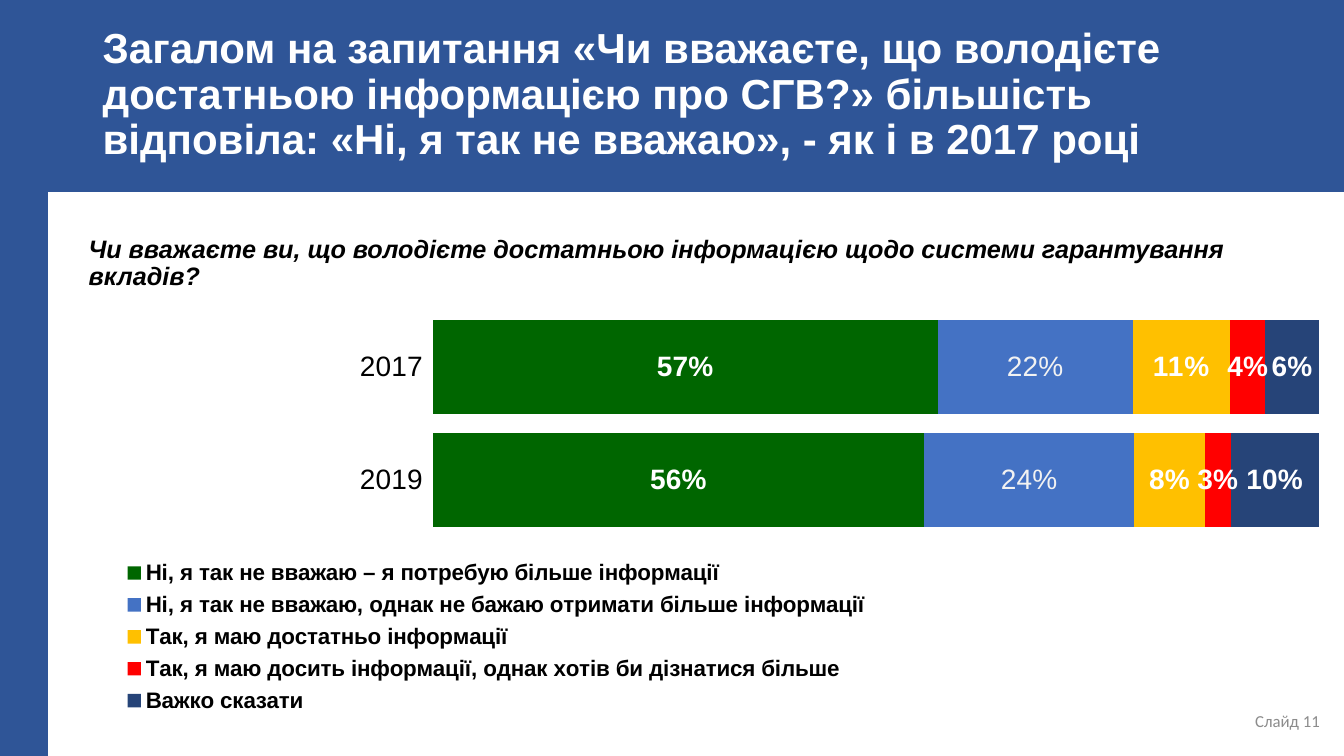
from lxml import etree
from pptx import Presentation
from pptx.chart.data import CategoryChartData
from pptx.dml.color import RGBColor
from pptx.enum.chart import XL_CHART_TYPE, XL_LABEL_POSITION, XL_LEGEND_POSITION, XL_TICK_MARK
from pptx.enum.shapes import MSO_SHAPE
from pptx.enum.text import MSO_ANCHOR, PP_ALIGN
from pptx.oxml.ns import qn
from pptx.util import Inches, Pt

BLACK = RGBColor(0x00, 0x00, 0x00)
WHITE = RGBColor(0xFF, 0xFF, 0xFF)
PALE = RGBColor(0xF2, 0xF2, 0xF2)
GREY = RGBColor(0x8C, 0x8C, 0x8C)
BANNER = RGBColor(0x2F, 0x55, 0x97)
GREEN = RGBColor(0x00, 0x66, 0x00)
BLUE = RGBColor(0x44, 0x72, 0xC4)
AMBER = RGBColor(0xFF, 0xC0, 0x00)
RED = RGBColor(0xFF, 0x00, 0x00)
NAVY = RGBColor(0x26, 0x44, 0x78)

YEARS = ["2017", "2019"]
# Answer, shares by year, bar colour, label colour, bold label
ANSWERS = [
    ("Ні, я так не вважаю – я потребую більше інформації", (0.57, 0.56), GREEN, WHITE, True),
    ("Ні, я так не вважаю, однак не бажаю отримати більше інформації", (0.22, 0.24), BLUE, PALE, False),
    ("Так, я маю достатньо інформації", (0.11, 0.08), AMBER, WHITE, True),
    ("Так, я маю досить інформації, однак хотів би дізнатися більше", (0.04, 0.03), RED, WHITE, True),
    ("Важко сказати", (0.06, 0.10), NAVY, WHITE, True),
]


class SlideBuilder:
    """Holds the style and the current slide."""

    def __init__(self, presentation, font_name):
        self.slide = presentation.slides.add_slide(presentation.slide_layouts[6])
        self.font_name = font_name

    def style_font(self, font, color, **values):
        for name, value in {"name": self.font_name, **values}.items():
            setattr(font, name, value)
        font.color.rgb = color

    def band(self, *box):
        shape = self.slide.shapes.add_shape(MSO_SHAPE.RECTANGLE, *map(Inches, box))
        shape.shadow.inherit = False
        shape.fill.solid()
        shape.fill.fore_color.rgb = BANNER
        shape.line.color.rgb = BANNER
        shape.line.width = Pt(1)

    def text(self, box, words, color, paragraph_format=None, anchor=MSO_ANCHOR.TOP, **font_values):
        frame = self.slide.shapes.add_textbox(*map(Inches, box)).text_frame
        frame.word_wrap = True
        frame.vertical_anchor = anchor
        paragraph = frame.paragraphs[0]
        for name, value in (paragraph_format or {}).items():
            setattr(paragraph, name, value)
        run = paragraph.add_run()
        run.text = words
        self.style_font(run.font, color, **font_values)

    def manual_layout(self, inner, x, y, w, h):
        layout = etree.Element(qn("c:layout"))
        manual = etree.SubElement(layout, qn("c:manualLayout"))
        settings = {"layoutTarget": "inner"} if inner else {}
        settings.update(xMode="edge", yMode="edge", x=x, y=y, w=w, h=h)
        for name, value in settings.items():
            etree.SubElement(manual, qn(f"c:{name}")).set("val", str(value))
        return layout

    def stacked_bars(self, box, categories, answers):
        data = CategoryChartData(number_format="0%")
        data.categories = categories
        for name, shares, *_ in answers:
            data.add_series(name, shares)
        chart = self.slide.shapes.add_chart(
            XL_CHART_TYPE.BAR_STACKED_100, *map(Inches, box), data).chart
        chart.has_title = False
        self.style_font(chart.font, BLACK, size=Pt(16), bold=True)

        # Bars and their labels
        plot = chart.plots[0]
        for name, value in {"gap_width": 20, "overlap": 100, "vary_by_categories": False}.items():
            setattr(plot, name, value)
        for series, (_, _, fill, label_color, bold) in zip(plot.series, answers):
            series.format.fill.solid()
            series.format.fill.fore_color.rgb = fill
            labels = series.data_labels
            label_format = {"show_value": True, "number_format": "0%",
                            "number_format_is_linked": False,
                            "position": XL_LABEL_POSITION.CENTER}
            for name, value in label_format.items():
                setattr(labels, name, value)
            self.style_font(labels.font, label_color, size=Pt(20), bold=bold)

        # Axes
        years = chart.category_axis
        years.reverse_order = True
        years.major_tick_mark = XL_TICK_MARK.OUTSIDE
        years.format.line.fill.background()
        self.style_font(years.tick_labels.font, BLACK, size=Pt(20), bold=False)
        chart.value_axis.has_major_gridlines = False
        chart.value_axis.visible = False

        # Legend below the bars
        chart.has_legend = True
        legend = chart.legend
        legend.position = XL_LEGEND_POSITION.RIGHT
        legend.include_in_layout = False
        self.style_font(legend.font, BLACK, size=Pt(16), bold=True)

        # Places of the bars and the legend inside the chart
        plot_area = chart.element.find(".//" + qn("c:plotArea"))
        legend_element = chart.element.find(".//" + qn("c:legend"))
        for parent in (plot_area, legend_element):
            for old_layout in parent.findall(qn("c:layout")):
                parent.remove(old_layout)
        plot_area.insert(0, self.manual_layout(True, 0.28, 0.01, 0.7, 0.54))
        legend_element.insert(1, self.manual_layout(False, 0.02, 0.59, 0.62, 0.4))


def main():
    presentation = Presentation()
    presentation.slide_width = Inches(13.33)
    presentation.slide_height = Inches(7.5)
    builder = SlideBuilder(presentation, "Arial")

    # Question and slide number
    builder.text((0.78, 2.3, 12.28, 0.82),
                 "Чи вважаєте ви, що володієте достатньою інформацією щодо системи гарантування вкладів?",
                 BLACK, {"line_spacing": 0.9, "space_before": Pt(10)},
                 size=Pt(18), bold=True, italic=True)
    builder.text((10.19, 6.95, 3, 0.4), "Слайд 11", GREY, {"alignment": PP_ALIGN.RIGHT},
                 MSO_ANCHOR.MIDDLE, name="Calibri", size=Pt(12))

    # Answers by year
    builder.stacked_bars((0.78, 3.04, 12.55, 4.15), YEARS, ANSWERS)

    # Side and top bands with the title
    builder.band(0, 0, 0.47, 7.5)
    builder.band(0, 0, 13.33, 1.9)
    builder.text((0.92, 0.4, 12.28, 1.1),
                 "Загалом на запитання «Чи вважаєте, що володієте достатньою інформацією про СГВ?» "
                 "більшість відповіла: «Ні, я так не вважаю», - як і в 2017 році",
                 WHITE, {"line_spacing": 0.9}, MSO_ANCHOR.MIDDLE, size=Pt(30), bold=True)

    presentation.save("out.pptx")


if __name__ == "__main__":
    main()
